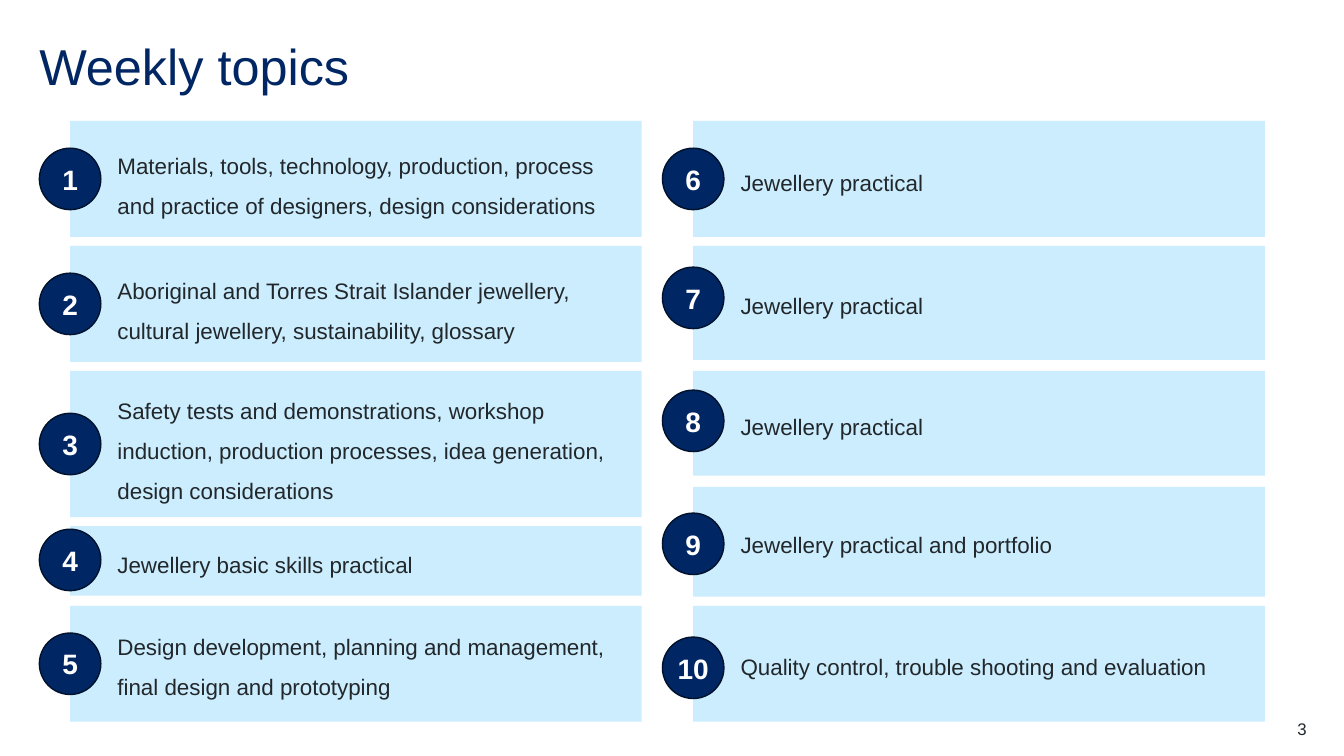
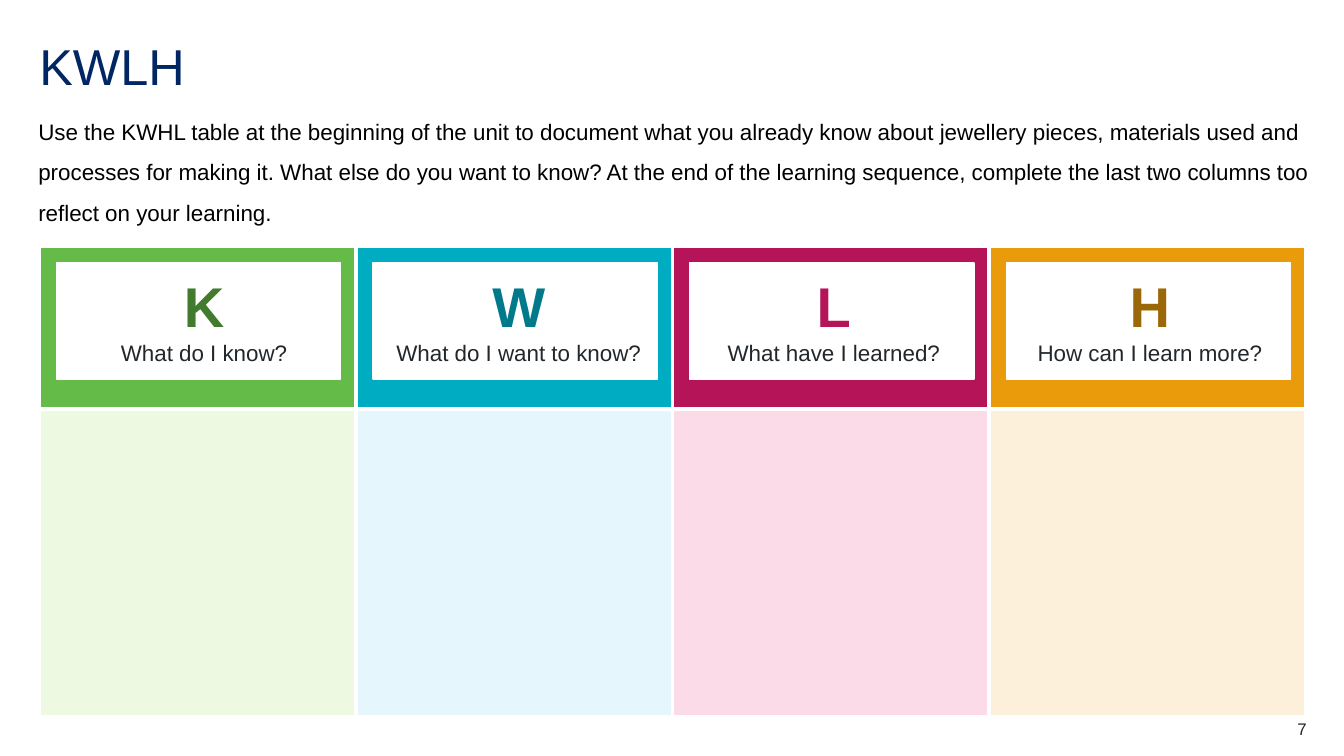
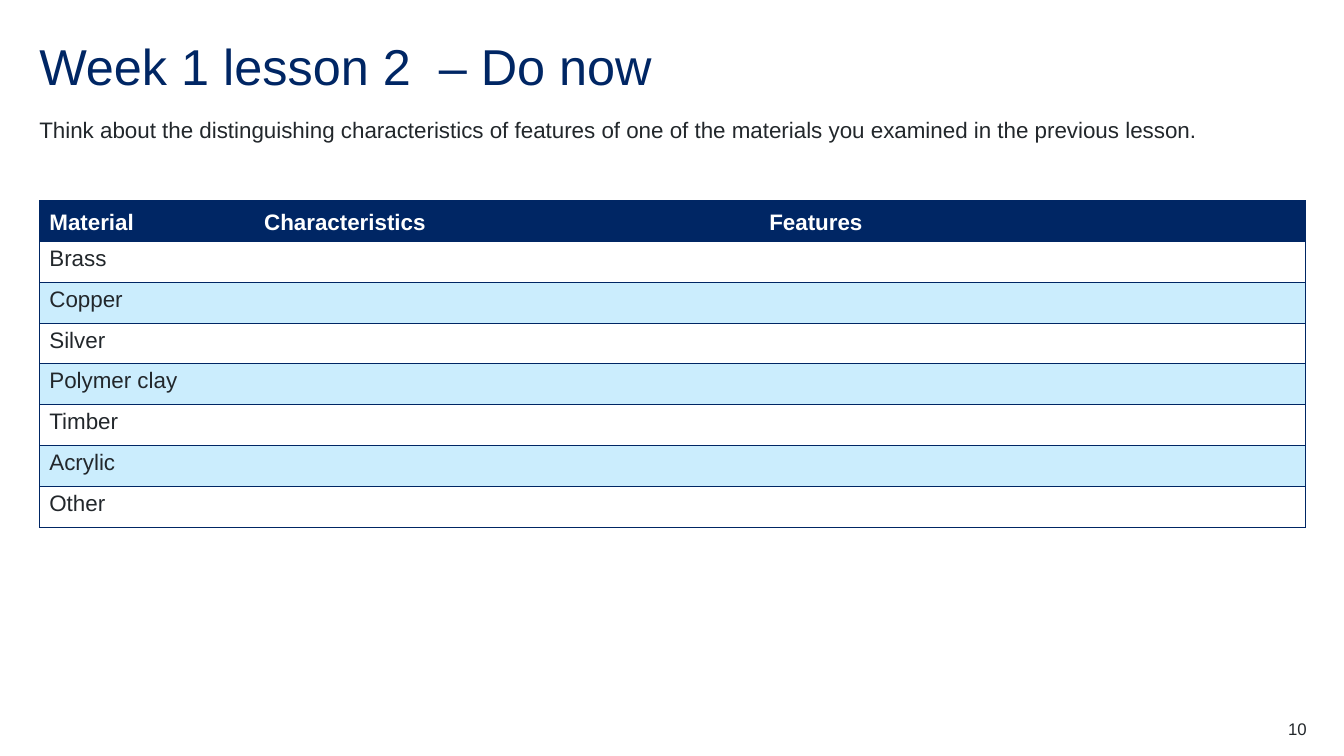
import dataclasses

import lxml.etree
import pptx
import pptx.dml.color
import pptx.enum.shapes
import pptx.enum.text
import pptx.oxml.ns
import pptx.util

Inches = pptx.util.Inches
Pt = pptx.util.Pt
Color = pptx.dml.color.RGBColor.from_string
qn = pptx.oxml.ns.qn
Align = pptx.enum.text.PP_ALIGN
Anchor = pptx.enum.text.MSO_ANCHOR
ShapeType = pptx.enum.shapes.MSO_SHAPE


@dataclasses.dataclass(frozen=True)
class Theme:
    font: str = "Arial"
    navy: str = "002664"
    navy_dark: str = "00112C"
    sky: str = "CBEDFD"
    ink: str = "22272B"
    black: str = "000000"
    white: str = "FFFFFF"
    title_size: int = 36
    letter_size: int = 40
    badge_size: int = 20
    body_size: int = 16
    number_size: int = 12
    margin: float = 0.39
    content_width: float = 12.56


theme = Theme()

# Each text style: size, colour, bold, paragraph format
TITLE = (theme.title_size, theme.navy, False, {"line_spacing": 0.9})
NUMBER = (theme.number_size, theme.ink, False, {"alignment": Align.RIGHT})
BODY = (theme.body_size, theme.ink, False, {"line_spacing": 1.5, "alignment": Align.LEFT})
INTRO = (theme.body_size, theme.black, False, {"line_spacing": 1.5})
BADGE = (theme.badge_size, theme.white, True, {"alignment": Align.CENTER})
CAPTION = (theme.body_size, theme.ink, False, {"alignment": Align.CENTER})
TABLE_HEAD = (theme.body_size, theme.white, True, {})
TABLE_BODY = (theme.body_size, theme.ink, False, {})


def write_text(frame, lines, margins=(0, 0, 0, 0), anchor=Anchor.MIDDLE):
    """Fill a text frame with (text, style) lines; margins are left, top, right, bottom."""
    frame_format = {"word_wrap": True, "vertical_anchor": anchor}
    for side, margin in zip(("left", "top", "right", "bottom"), margins):
        frame_format[f"margin_{side}"] = Inches(margin)
    for name, value in frame_format.items():
        setattr(frame, name, value)
    for index, (text, (size, color, bold, paragraph_format)) in enumerate(lines):
        paragraph = frame.add_paragraph() if index else frame.paragraphs[0]
        for name, value in paragraph_format.items():
            setattr(paragraph, name, value)
        run = paragraph.add_run()
        run.text = text
        font_format = {"name": theme.font, "size": Pt(size), "bold": bold}
        for name, value in font_format.items():
            setattr(run.font, name, value)
        run.font.color.rgb = Color(color)


def style_cell(cell, fill, border_color, border_width, sides):
    """Draw borders on the given sides (in the order L, R, T, B), then fill the cell."""
    properties = cell._tc.get_or_add_tcPr()
    for side in sides:
        line = lxml.etree.SubElement(properties, qn(f"a:ln{side}"), w=str(Pt(border_width)))
        solid = lxml.etree.SubElement(line, qn("a:solidFill"))
        lxml.etree.SubElement(solid, qn("a:srgbClr"), val=border_color)
    cell.fill.solid()
    cell.fill.fore_color.rgb = Color(fill)


presentation = pptx.Presentation()
presentation.slide_width = Inches(13.33)
presentation.slide_height = Inches(7.5)

# Shared title and slide number
slides = []
for title, number in (("Weekly topics", 3), ("KWLH", 7), ("Week 1 lesson 2  – Do now", 10)):
    slide = presentation.slides.add_slide(presentation.slide_layouts[6])
    title_box = slide.shapes.add_textbox(
        Inches(theme.margin), Inches(0.39), Inches(theme.content_width), Inches(0.6))
    write_text(title_box.text_frame, [(title, TITLE)])
    number_box = slide.shapes.add_textbox(Inches(12.17), Inches(7.13), Inches(0.79), Inches(0.2))
    write_text(number_box.text_frame, [(str(number), NUMBER)])
    slides.append(slide)
topics_slide, kwlh_slide, materials_slide = slides

# Weekly topics: card top, card height, badge top, bottom margin, text
topic_columns = (
    (0.39, (
        (1.2, 1.15, 1.47, 0.05, "Materials, tools, technology, production, process and practice "
                                "of designers, design considerations"),
        (2.44, 1.15, 2.71, 0.05, "Aboriginal and Torres Strait Islander jewellery, "
                                 " cultural jewellery, sustainability, glossary"),
        (3.68, 1.45, 4.1, 0.05, "Safety tests and demonstrations, workshop induction, production "
                                "processes, idea generation, design considerations"),
        (5.22, 0.69, 5.25, 0.12, "Jewellery basic skills practical"),
        (6.01, 1.15, 6.28, 0.12, "Design development, planning and management, "
                                 "final design and prototyping"),
    )),
    (6.57, (
        (1.2, 1.15, 1.47, 0.12, "Jewellery practical"),
        (2.44, 1.13, 2.65, 0.12, "Jewellery practical"),
        (3.68, 1.04, 3.87, 0.12, "Jewellery practical"),
        (4.83, 1.09, 5.09, 0.12, "Jewellery practical and portfolio"),
        (6.01, 1.15, 6.32, 0.12, "Quality control, trouble shooting and evaluation"),
    )),
)
badge_diameter = 0.61
week = 0
for badge_left, topics in topic_columns:
    for top, height, badge_top, bottom_margin, text in topics:
        week += 1
        card = topics_slide.shapes.add_shape(
            ShapeType.RECTANGLE, Inches(badge_left + badge_diameter / 2), Inches(top),
            Inches(5.67), Inches(height))
        card.line.fill.background()
        write_text(card.text_frame, [(text, BODY)], (0.47, 0.05, 0.2, bottom_margin))
        badge = topics_slide.shapes.add_shape(
            ShapeType.OVAL, Inches(badge_left), Inches(badge_top),
            Inches(badge_diameter), Inches(badge_diameter))
        badge.line.color.rgb = Color(theme.navy_dark)
        badge.line.width = Pt(1)
        write_text(badge.text_frame, [(str(week), BADGE)])
        for shape, fill in ((card, theme.sky), (badge, theme.navy)):
            shape.shadow.inherit = False
            shape.fill.solid()
            shape.fill.fore_color.rgb = Color(fill)

# Introductory paragraphs and tables
intros = (
    (kwlh_slide, (0.38, 0.99, 12.71, 1.26), INTRO,
     "Use the KWHL table at the beginning of the unit to document what you already know about "
     "jewellery pieces, materials used and processes for making it. What else do you want to "
     "know? At the end of the learning sequence, complete the last two columns too reflect on "
     "your learning."),
    (materials_slide, (theme.margin, 0.97, theme.content_width, 0.46), BODY,
     "Think about the distinguishing characteristics of features of one of the materials you "
     "examined in the previous lesson."),
)
for slide, box, style, text in intros:
    intro = slide.shapes.add_textbox(*map(Inches, box))
    write_text(intro.text_frame, [(text, style)], (0, 0.05, 0.1, 0.05), Anchor.TOP)

column_width = theme.content_width / 4
tables = []
for slide, top, widths, heights in (
    (kwlh_slide, 2.44, [column_width] * 4, [1.62, 3.05]),
    (materials_slide, 1.99, [2.13, 5.01, 5.42], [3.24 / 8] * 8),
):
    frame = slide.shapes.add_table(
        len(heights), len(widths), Inches(theme.margin), Inches(top),
        Inches(sum(widths)), Inches(sum(heights)))
    table = frame.table
    table.first_row = table.horz_banding = False
    # The built-in "No Style, No Grid" table style
    table._tbl.tblPr.find(qn("a:tableStyleId")).text = "{2D5ABB26-0587-4C30-8999-92F81FD0307C}"
    for column, width in zip(table.columns, widths):
        column.width = Inches(width)
    for row, height in zip(table.rows, heights):
        row.height = Inches(height)
    tables.append(table)
kwlh_table, materials_table = tables

# KWLH: letter, question, letter colour, header fill, body fill, caption left, caption width
kwlh_columns = (
    ("K", "What do I know?", "427B2D", "64BB47", "EDF9E0", 0.81, 2.43),
    ("W", "What do I want to know?", "007A8A", "00ACC2", "E5F7FC", 3.75, 2.79),
    ("L", "What have I learned?", "B51458", "B51458", "FBDBE7", 6.86, 2.82),
    ("H", "How can I learn more?", "9B6808", "EA9B0C", "FCF0DA", 10.01, 2.79),
)
for index, (letter, question, color, head_fill, body_fill, left, width) in enumerate(kwlh_columns):
    for row_index, fill in enumerate((head_fill, body_fill)):
        style_cell(kwlh_table.cell(row_index, index), fill, theme.white, 3, "LRTB")
    panel = kwlh_slide.shapes.add_shape(
        ShapeType.RECTANGLE, Inches(0.56 + index * column_width), Inches(2.61),
        Inches(2.82), Inches(1.15))
    panel.shadow.inherit = False
    panel.fill.solid()
    panel.fill.fore_color.rgb = Color(theme.white)
    panel.line.color.rgb = Color(theme.white)
    panel.line.width = Pt(1)
    caption = kwlh_slide.shapes.add_textbox(
        Inches(left), Inches(2.62), Inches(width), Inches(1.08))
    letter_style = (theme.letter_size, color, True, {"alignment": Align.CENTER})
    write_text(caption.text_frame, [(letter, letter_style), (question, CAPTION)],
               (0.1, 0.05, 0.1, 0.05))

# Materials table
materials = ("Brass", "Copper", "Silver", "Polymer clay", "Timber", "Acrylic", "Other")
material_rows = [("Material", "Characteristics", "Features")]
material_rows += [(material, "", "") for material in materials]
column_sides = ("LTB", "TB", "RTB")
for row_index, texts in enumerate(material_rows):
    if row_index == 0:
        fill, style, top_margin, anchor = theme.navy, TABLE_HEAD, 0.08, Anchor.MIDDLE
    else:
        fill = theme.white if row_index % 2 else theme.sky
        style, top_margin, anchor = TABLE_BODY, 0.05, Anchor.TOP
    for column_index, text in enumerate(texts):
        cell = materials_table.cell(row_index, column_index)
        style_cell(cell, fill, theme.navy, 0.5, column_sides[column_index])
        cell.vertical_anchor = anchor
        cell.margin_top = Inches(top_margin)
        if text:
            size, color, bold, _ = style
            run = cell.text_frame.paragraphs[0].add_run()
            run.text = text
            for name, value in {"name": theme.font, "size": Pt(size), "bold": bold}.items():
                setattr(run.font, name, value)
            run.font.color.rgb = Color(color)

presentation.save("out.pptx")
